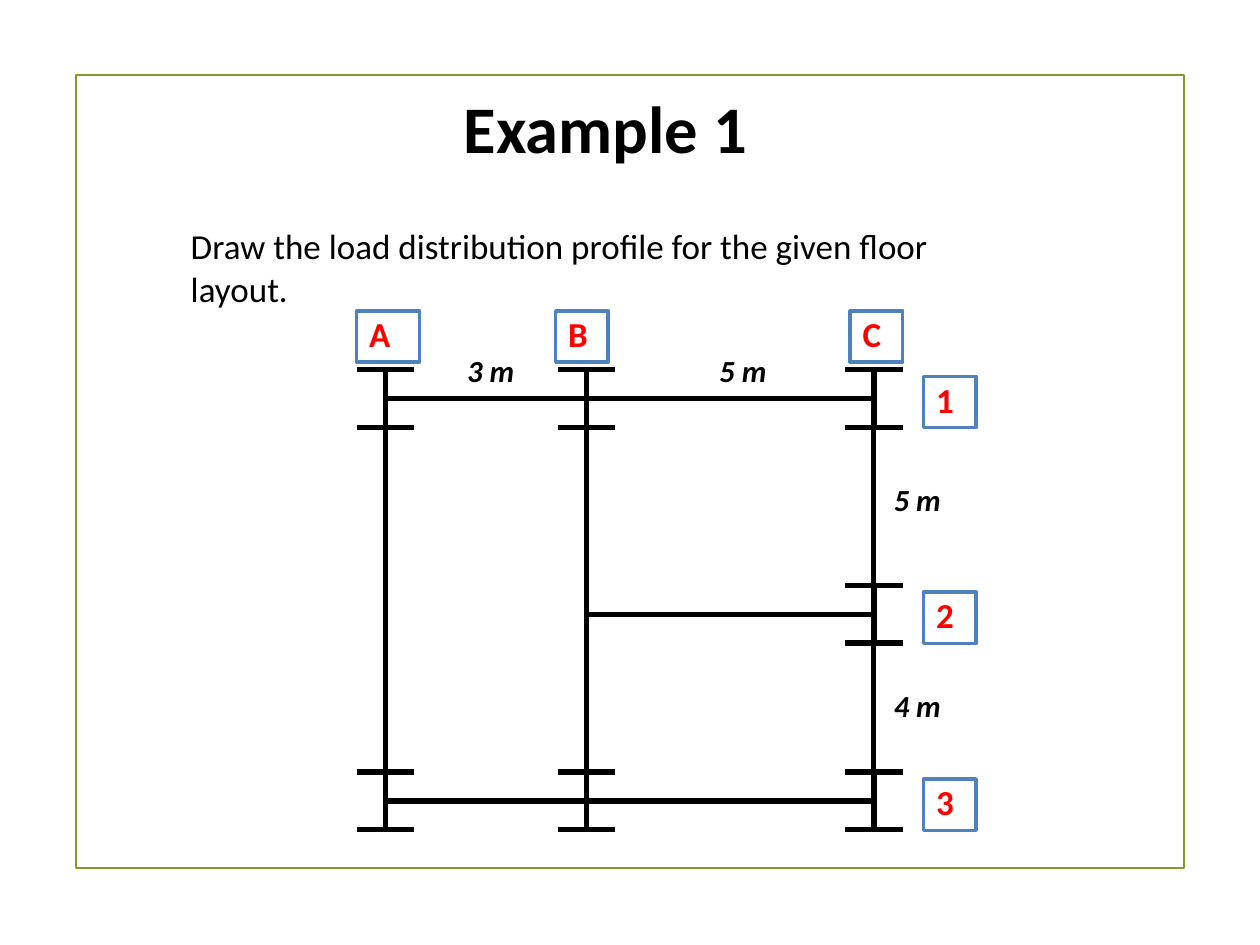
import pptx
import pptx.util
import pptx.dml.color
import pptx.enum.shapes
import pptx.enum.text
import pptx.oxml.ns
import lxml.etree

Pt = pptx.util.Pt
RGB = pptx.dml.color.RGBColor
ALIGN = pptx.enum.text.PP_ALIGN

BLACK = RGB(0, 0, 0)
WHITE = RGB(0xFF, 0xFF, 0xFF)
RED = RGB(0xFF, 0, 0)
BLUE = RGB(0x4F, 0x81, 0xBC)
GREEN = RGB(0x83, 0x99, 0x2A)

FLANGE = 16.5  # half the width and depth of a column section


def add_rect(slide, box, color, width, fill=None):
    rect = slide.shapes.add_shape(
        pptx.enum.shapes.MSO_SHAPE.RECTANGLE, *[Pt(v) for v in box])
    rect.shadow.inherit = False
    if fill is None:
        rect.fill.background()
    else:
        rect.fill.solid()
        rect.fill.fore_color.rgb = fill
    rect.line.color.rgb = color
    rect.line.width = Pt(width)
    return rect


def add_line(slide, x1, y1, x2, y2):
    line = slide.shapes.add_connector(
        pptx.enum.shapes.MSO_CONNECTOR.STRAIGHT, Pt(x1), Pt(y1), Pt(x2), Pt(y2))
    line.line.color.rgb = BLACK
    line.line.width = Pt(3)
    lxml.etree.SubElement(line._element.spPr, pptx.oxml.ns.qn("a:effectLst"))


def set_frame(shape, left=0, top=0, right=0):
    frame = shape.text_frame
    frame.word_wrap = True
    frame.vertical_anchor = pptx.enum.text.MSO_ANCHOR.TOP
    frame.margin_left, frame.margin_top = Pt(left), Pt(top)
    frame.margin_right, frame.margin_bottom = Pt(right), 0
    return frame


def set_para(para, text, size, color=BLACK, bold=True, italic=False,
             align=ALIGN.LEFT, pitch=None):
    para.text = text
    para.alignment = align
    if pitch:
        para.line_spacing = pitch
    font = para.font
    font.name, font.size = "Calibri", Pt(size)
    font.bold, font.italic = bold, italic
    font.color.rgb = color


def add_head(slide, x, y, w, h):
    """Place the title and the task below it in one text box."""
    box = slide.shapes.add_textbox(Pt(x), Pt(y), Pt(w), Pt(h))
    frame = set_frame(box, left=1, right=12)
    title = frame.paragraphs[0]
    title._p.get_or_add_pPr().set("marL", str(Pt(156)))
    set_para(title, "Example 1", 38, pitch=Pt(41.3))
    task = frame.add_paragraph()
    set_para(task, "Draw the load distribution profile for the given floor layout.",
             20, bold=False, pitch=1.02)
    task.space_before = Pt(32.5)


def add_tag(slide, text, x, y, w=30):
    tag = add_rect(slide, (x, y, w, 29.4), BLUE, 2)
    frame = set_frame(tag, left=7.2, top=1)
    set_para(frame.paragraphs[0], text, 20, RED)


def add_span(slide, text, box, pitch, align=ALIGN.LEFT, left=1):
    """Label the length of a bay."""
    label = slide.shapes.add_textbox(*[Pt(v) for v in box])
    frame = set_frame(label, left=left)
    set_para(frame.paragraphs[0], text, 17.5, italic=True, align=align,
             pitch=Pt(pitch))


def add_column(slide, x, y):
    """Draw an I section centred on x, y."""
    top, bottom = y - FLANGE, y + FLANGE
    for edge in (top, bottom):
        add_line(slide, x - FLANGE, edge, x + FLANGE, edge)
    add_line(slide, x, top, x, bottom)


def add_plan(slide, x, y, w, h):
    """Draw the floor plan, whose grid lines span the given box."""
    cols = {"A": x, "B": x + 114.8, "C": x + w}
    rows = {"1": y, "2": y + 123.4, "3": y + h}
    bays = [("A", "B", "1", "3"), ("B", "C", "1", "2"), ("B", "C", "2", "3")]
    for left, right, top, bottom in bays:
        add_rect(slide, (cols[left], rows[top], cols[right] - cols[left],
                         rows[bottom] - rows[top]), BLACK, 3, WHITE)
    for spot in ("A1", "B1", "C1", "C2", "A3", "B3", "C3"):
        add_column(slide, cols[spot[0]], rows[spot[1]])

    for name, shift, width in (("A", 16.5, 36), ("B", 17.5, 30), ("C", 13.5, 30)):
        add_tag(slide, name, cols[name] - shift, y - 50, width)
    for name, mid in rows.items():
        add_tag(slide, name, x + w + 28.4, mid - 12.6)

    for text, left, right, inset in (("3 m", "A", "B", 5.5), ("5 m", "B", "C", 14.7)):
        add_span(slide, text, (cols[left], y - FLANGE, cols[right] - cols[left],
                               FLANGE), 10.8, ALIGN.CENTER, inset)
    for text, drop in (("5 m", 49.6), ("4 m", 167)):
        add_span(slide, text, (x + w + 10.4, y + drop, 36, 21), 18.8)


def main():
    deck = pptx.Presentation()
    deck.slide_width, deck.slide_height = Pt(720), Pt(540)
    slide = deck.slides.add_slide(deck.slide_layouts[6])
    add_rect(slide, (43.6, 42.7, 633, 453.4), GREEN, 1.25)
    add_plan(slide, 220.3, 227.6, 279.1, 230.1)
    add_head(slide, 108, 54, 486, 94.3)
    deck.save("out.pptx")


if __name__ == "__main__":
    main()
